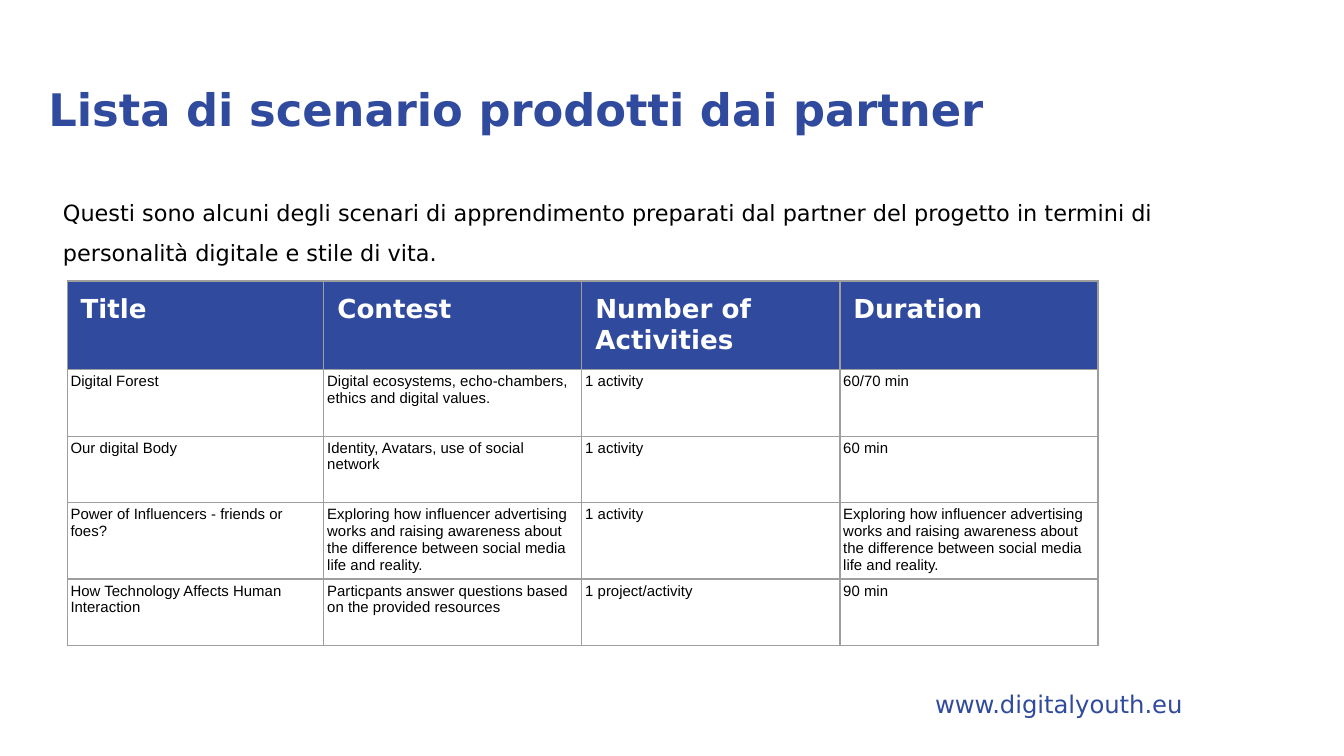
from lxml.etree import SubElement
from pptx import Presentation
from pptx.dml.color import RGBColor
from pptx.enum.text import MSO_ANCHOR, MSO_AUTO_SIZE, PP_ALIGN
from pptx.oxml.ns import qn
from pptx.util import Inches, Pt

COLORS = {"blue": "304A9D", "white": "FFFFFF", "black": "000000", "border": "9E9E9E"}
HEADING_FONT, TABLE_FONT = "DejaVu Sans", "Arial"

TITLE = "Lista di scenario prodotti dai partner"
INTRO = (
    "Questi sono alcuni degli scenari di apprendimento preparati dal partner "
    "del progetto in termini di personalità digitale e stile di vita."
)
WEBSITE = "www.digitalyouth.eu"
INFLUENCERS = (
    "Exploring how influencer advertising works and raising awareness about "
    "the difference between social media life and reality."
)
SCENARIOS = [
    ("Title", "Contest", "Number of Activities", "Duration"),
    ("Digital Forest", "Digital ecosystems, echo-chambers, ethics and digital values.",
     "1 activity", "60/70 min"),
    ("Our digital Body", "Identity, Avatars, use of social network", "1 activity", "60 min"),
    ("Power of Influencers - friends or foes?", INFLUENCERS, "1 activity", INFLUENCERS),
    ("How Technology Affects Human Interaction",
     "Particpants answer questions based on the provided resources",
     "1 project/activity", "90 min"),
]
COLUMN_WIDTHS = [1.91, 1.92, 1.92, 1.92]
ROW_POINTS = [47.6, 35.6, 35.6, 41, 35.6]
TABLE_LEFT, TABLE_TOP = 0.5, 2.09
WIDE_MARGIN, CELL_MARGIN = Inches(0.1), Pt(1.8)


def color(name):
    return RGBColor.from_string(COLORS[name])


def set_margins(target, margin):
    for side in ("left", "top", "right", "bottom"):
        setattr(target, f"margin_{side}", margin)


def write(text_frame, text, size, color_name, bold=False, font=HEADING_FONT):
    paragraph = text_frame.paragraphs[0]
    paragraph.alignment = PP_ALIGN.LEFT
    run = paragraph.add_run()
    run.text = text
    run.font.name = font
    run.font.size = Pt(size)
    run.font.bold = bold
    run.font.color.rgb = color(color_name)
    return paragraph


def fill_box(shape, box, *text_style):
    shape.left, shape.top, shape.width, shape.height = map(Inches, box)
    frame = shape.text_frame
    frame.word_wrap = True
    frame.auto_size = MSO_AUTO_SIZE.NONE
    frame.vertical_anchor = MSO_ANCHOR.TOP
    set_margins(frame, WIDE_MARGIN)
    return write(frame, *text_style)


def add_borders(cell):
    properties = cell._tc.get_or_add_tcPr()
    for position, side in enumerate("LRTB"):
        line = SubElement(properties, qn(f"a:ln{side}"), w=str(Pt(0.75)))
        fill = SubElement(line, qn("a:solidFill"))
        SubElement(fill, qn("a:srgbClr"), val=COLORS["border"])
        properties.insert(position, line)


def add_scenario_table(slide):
    table = slide.shapes.add_table(
        len(SCENARIOS), len(COLUMN_WIDTHS), Inches(TABLE_LEFT), Inches(TABLE_TOP),
        Inches(sum(COLUMN_WIDTHS)), Pt(sum(ROW_POINTS)),
    ).table
    for column, width in zip(table.columns, COLUMN_WIDTHS):
        column.width = Inches(width)
    for index, (row, height, texts) in enumerate(zip(table.rows, ROW_POINTS, SCENARIOS)):
        row.height = Pt(height)
        for cell, text in zip(row.cells, texts):
            if index == 0:
                set_margins(cell, WIDE_MARGIN)
                cell.fill.solid()
                cell.fill.fore_color.rgb = color("blue")
                write(cell.text_frame, text, 14, "white", True)
            else:
                set_margins(cell, CELL_MARGIN)
                cell.fill.background()
                write(cell.text_frame, text, 8, "black", font=TABLE_FONT)
            add_borders(cell)


def main():
    presentation = Presentation()
    presentation.slide_width = Inches(10)
    presentation.slide_height = presentation.slide_width * 9 // 16
    slide = presentation.slides.add_slide(presentation.slide_layouts[5])

    website = slide.shapes.add_textbox(0, 0, 0, 0)
    fill_box(website, (6.86, 5.03, 2.16, 0.42), WEBSITE, 13, "blue")
    fill_box(slide.shapes.title, (0.26, 0.51, 9.32, 0.77), TITLE, 24, "blue", True)
    intro = slide.shapes.add_textbox(0, 0, 0, 0)
    paragraph = fill_box(intro, (0.37, 1.28, 8.67, 1.01), INTRO, 12, "black")
    paragraph.line_spacing = 1.5
    add_scenario_table(slide)

    presentation.save("out.pptx")


if __name__ == "__main__":
    main()
